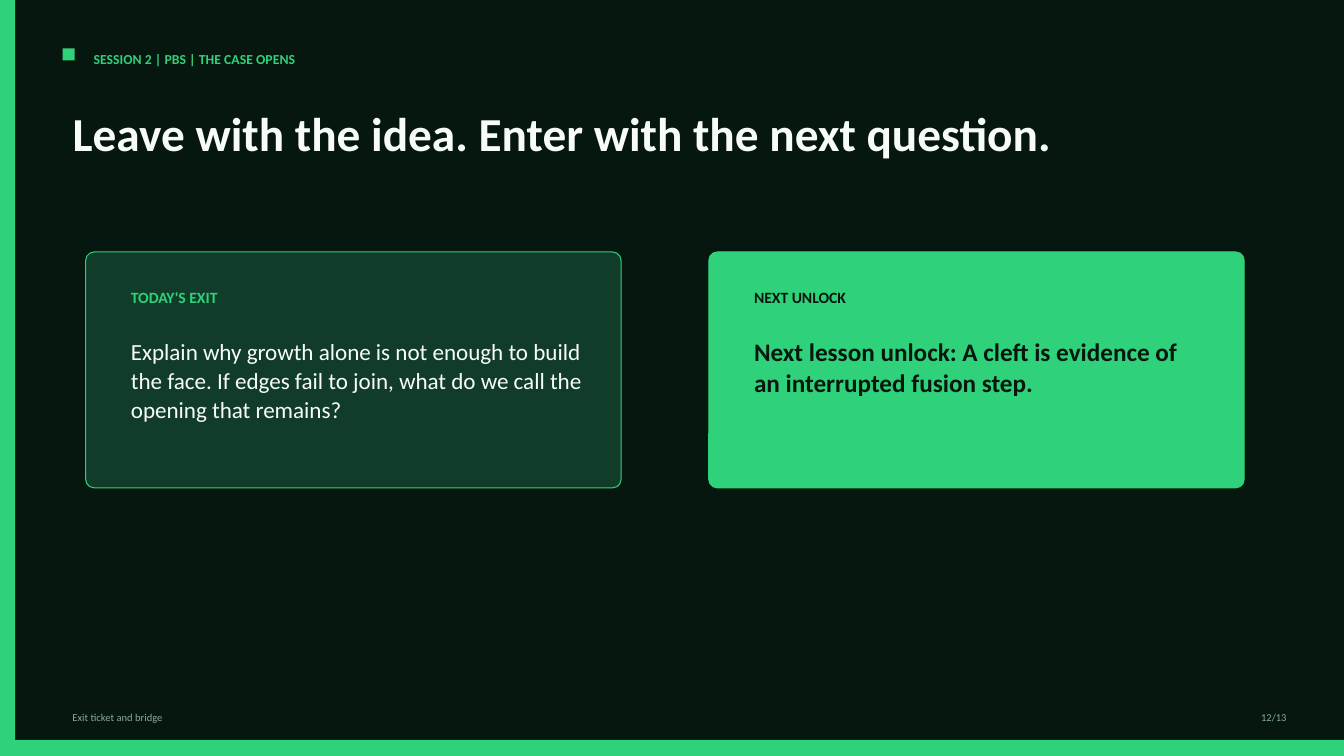
"""Build the closing slide with its exit ticket and next unlock cards."""
from dataclasses import dataclass

from pptx import Presentation
from pptx import util as u
from pptx.dml.color import RGBColor
from pptx.enum import shapes, text

DARK = RGBColor(0x06, 0x17, 0x0F)
GREEN = RGBColor(0x2F, 0xD2, 0x7A)
PANEL = RGBColor(0x12, 0x3C, 0x2A)
WHITE = RGBColor(0xF7, 0xFC, 0xF9)
MUTED = RGBColor(0x87, 0xAB, 0x9A)
FONT = "Calibri"
WIDTH, HEIGHT = 13.33, 7.5
KINDS = shapes.MSO_SHAPE


@dataclass(frozen=True)
class Box:
    left: float
    top: float
    width: float
    height: float

    def inches(self) -> list[u.Inches]:
        return [u.Inches(n) for n in (self.left, self.top, self.width, self.height)]


@dataclass(frozen=True)
class Card:
    left: float
    label: str
    body: str
    fill: RGBColor
    accent: RGBColor
    ink: RGBColor
    size: float
    bold: bool
    spacing: float


BARS = [
    Box(0, 0, 0.15, HEIGHT),
    Box(0, 7.34, WIDTH, 0.16),
    Box(0.62, 0.48, 0.12, 0.12),
]
CARDS = [
    Card(0.85, "TODAY'S EXIT",
         "Explain why growth alone is not enough to build the face. "
         "If edges fail to join, what do we call the opening that remains?",
         PANEL, GREEN, WHITE, 16.5, False, 1.06),
    Card(7.03, "NEXT UNLOCK",
         "Next lesson unlock: A cleft is evidence of an interrupted fusion step.",
         GREEN, DARK, DARK, 18, True, 1.02),
]


def write(slide, box: Box, words: str, *, size: float, color: RGBColor,
          bold: bool = False, align=text.PP_ALIGN.LEFT,
          spacing: float = 1.0, shape=None) -> None:
    shape = shape or slide.shapes.add_textbox(*box.inches())
    shape.left, shape.top, shape.width, shape.height = box.inches()
    frame = shape.text_frame
    frame.text = words
    frame.word_wrap = True
    frame.auto_size = text.MSO_AUTO_SIZE.NONE
    frame.vertical_anchor = text.MSO_ANCHOR.TOP
    line = frame.paragraphs[0]
    line.alignment = align
    line.line_spacing = spacing
    line.space_before = u.Pt(0)
    font = line.runs[0].font
    font.name, font.size, font.bold = FONT, u.Pt(size), bold
    font.color.rgb = color


def block(slide, box: Box, fill: RGBColor, kind=KINDS.RECTANGLE):
    shape = slide.shapes.add_shape(kind, *box.inches())
    shape.shadow.inherit = False
    shape.fill.solid()
    shape.fill.fore_color.rgb = fill
    shape.line.fill.background()
    return shape


def draw(slide, card: Card) -> None:
    panel = block(slide, Box(card.left, 2.5, 5.31, 2.34), card.fill,
                  KINDS.ROUNDED_RECTANGLE)
    panel.adjustments[0] = 0.036
    panel.line.color.rgb = GREEN
    panel.line.width = u.Pt(0.75)
    inner = card.left + 0.35
    write(slide, Box(inner, 2.81, 2.29, 0.26), card.label,
          size=11.2, color=card.accent, bold=True)
    write(slide, Box(inner, 3.28, 4.69, 1.15), card.body, size=card.size,
          color=card.ink, bold=card.bold, spacing=card.spacing)


def main() -> None:
    deck = Presentation()
    deck.slide_width, deck.slide_height = u.Inches(WIDTH), u.Inches(HEIGHT)
    slide = deck.slides.add_slide(deck.slide_layouts.get_by_name("Title Only"))
    slide.background.fill.solid()
    slide.background.fill.fore_color.rgb = DARK

    for bar in BARS:
        block(slide, bar, GREEN)
    write(slide, Box(0.83, 0.45, 6.46, 0.25), "SESSION 2 | PBS | THE CASE OPENS",
          size=9.8, color=GREEN, bold=True)
    write(slide, Box(0.62, 1.04, 11.46, 0.88),
          "Leave with the idea. Enter with the next question.",
          size=33.8, color=WHITE, bold=True, spacing=0.92,
          shape=slide.shapes.title)
    for card in CARDS:
        draw(slide, card)
    write(slide, Box(0.62, 7, 9.38, 0.19), "Exit ticket and bridge",
          size=7.5, color=MUTED)
    write(slide, Box(12.03, 7, 0.83, 0.19), "12/13",
          size=7.5, color=MUTED, align=text.PP_ALIGN.RIGHT)
    deck.save("out.pptx")


if __name__ == "__main__":
    main()
